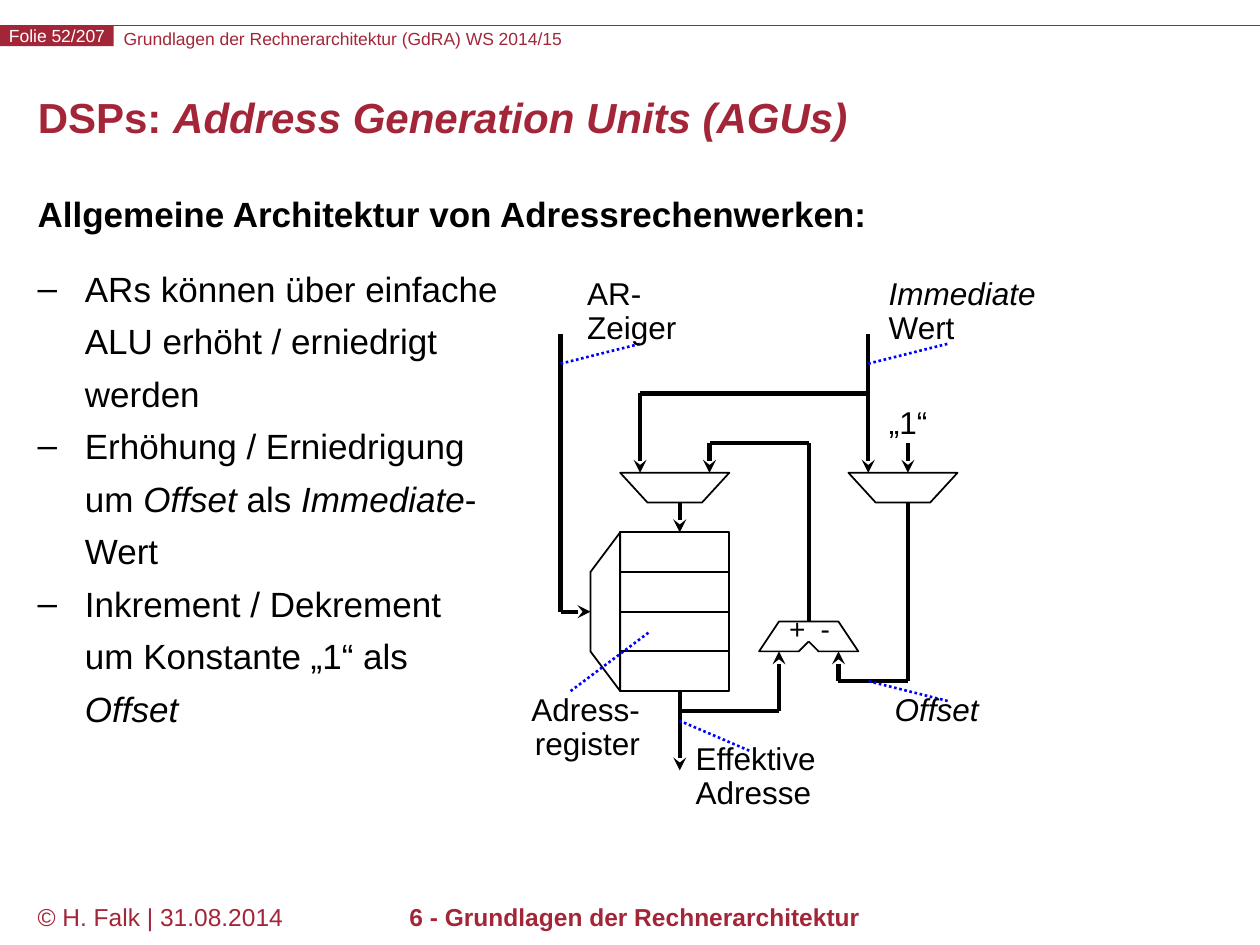
import pptx
import pptx.util
import pptx.dml.color
import pptx.enum.dml
import pptx.enum.shapes
import pptx.enum.text
import pptx.oxml.ns
import lxml.etree

Pt = pptx.util.Pt
ALIGN = pptx.enum.text.PP_ALIGN
ANCHOR = pptx.enum.text.MSO_ANCHOR
KIND = pptx.enum.shapes.MSO_SHAPE


class Theme:
    font = "Arial"
    red, black, white, blue = "A32638", "000000", "FFFFFF", "0000FF"
    title, body, label, sign, foot, head = 24, 20, 18, 16, 14, 10
    thin, wire, dots = 1, 2.5, 1.5
    # Diagram grid: origin and step in points
    left, top, step = 320.4, 190.8, 5.67


def grid(x, y):
    return Theme.left + x * Theme.step, Theme.top + y * Theme.step


def color(code):
    return pptx.dml.color.RGBColor.from_string(code)


def child(node, tag, **attrs):
    return lxml.etree.SubElement(node, pptx.oxml.ns.qn(tag), attrs)


class Page:
    def __init__(self, slide):
        self.slide = slide
        self.shapes = slide.shapes

    def fill_text(self, shape, paras, size, ink=Theme.black, bold=False,
                  align=ALIGN.LEFT, space=None, gap=0, inset=None,
                  anchor=ANCHOR.TOP):
        """Each paragraph is a list of runs; a run in a tuple is italic."""
        frame = shape.text_frame
        frame.word_wrap = True
        frame.vertical_anchor = anchor
        if inset is not None:
            frame.margin_left = frame.margin_right = Pt(inset)
            frame.margin_top = frame.margin_bottom = Pt(inset)
        for i, runs in enumerate(paras):
            para = frame.add_paragraph() if i else frame.paragraphs[0]
            para.alignment = align
            para.space_before = Pt(gap if i else 0)
            if space:
                para.line_spacing = space
            for part in runs:
                slant = isinstance(part, tuple)
                run = para.add_run()
                run.text = part[0] if slant else part
                font = run.font
                font.name, font.size = Theme.font, Pt(size)
                font.bold, font.italic = bold, slant
                font.color.rgb = color(ink)
        return frame

    def title(self, box, runs):
        shape = self.shapes.title
        shape.left, shape.top, shape.width, shape.height = map(Pt, box)
        self.fill_text(shape, [runs], Theme.title, Theme.red, True,
                       space=Pt(24), anchor=ANCHOR.MIDDLE)

    def text(self, box, paras, size, **style):
        shape = self.shapes.add_textbox(*map(Pt, box))
        return self.fill_text(shape, paras, size, **style)

    def list(self, box, paras):
        frame = self.text(box, paras, Theme.body, space=1.25)
        for para in frame.paragraphs:
            props = para._p.get_or_add_pPr()
            props.set("marL", str(Pt(27)))
            props.set("indent", str(-Pt(27)))
            child(props, "a:buFont", typeface=Theme.font)
            child(props, "a:buChar", char="–")

    def label(self, box, paras, align=ALIGN.LEFT, size=Theme.label, space=0.7):
        return self.text(box, paras, size, align=align, space=space,
                         gap=4, inset=0)

    def rect(self, box, fill=None):
        shape = self.shapes.add_shape(KIND.RECTANGLE, *map(Pt, box))
        shape.shadow.inherit = False
        if fill:
            shape.fill.solid()
            shape.fill.fore_color.rgb = color(fill)
            shape.line.fill.background()
        else:
            self.edge(shape)
        return shape

    def edge(self, shape):
        shape.fill.background()
        shape.line.color.rgb = color(Theme.black)
        shape.line.width = Pt(Theme.thin)

    def outline(self, spots, close=True):
        ends = [tuple(map(Pt, grid(*spot))) for spot in spots]
        form = self.shapes.build_freeform(*ends[0])
        form.add_line_segments(ends[1:], close=close)
        shape = form.convert_to_shape()
        shape.shadow.inherit = False
        self.edge(shape)

    def line(self, start, end, ink=Theme.black, width=Theme.wire,
             dots=False, arrow=False):
        link = self.shapes.add_connector(
            pptx.enum.shapes.MSO_CONNECTOR.STRAIGHT,
            *map(Pt, start + end))
        link.line.color.rgb = color(ink)
        link.line.width = Pt(width)
        if dots:
            link.line.dash_style = pptx.enum.dml.MSO_LINE.ROUND_DOT
        if arrow:
            child(link.line._get_or_add_ln(), "a:tailEnd", type="stealth")
        child(link._element.spPr, "a:effectLst")


def frame_parts(page):
    # Header band
    page.line((0, 14.4), (720, 14.4), ink=Theme.red, width=0.75)
    page.text((70.6, 15.8, 475, 12), [["Grundlagen der Rechnerarchitektur (GdRA) WS 2014/15"]],
              Theme.head, ink=Theme.red, inset=0)
    tag = page.rect((0, 14.4, 65, 12), fill=Theme.red)
    page.fill_text(tag, [["Folie 52/207"]], Theme.head, ink=Theme.white,
                   align=ALIGN.CENTER, inset=0, anchor=ANCHOR.MIDDLE)
    # Footer
    page.text((14.4, 512, 158, 28), [["© H. Falk | 31.08.2014"]],
              Theme.foot, ink=Theme.red)
    page.text((144.7, 512, 436, 28), [["6 - Grundlagen der Rechnerarchitektur"]],
              Theme.foot, ink=Theme.red, bold=True, align=ALIGN.CENTER)


def body_parts(page):
    page.title((14.4, 43.2, 692, 52), ["DSPs: ", ("Address Generation Units (AGUs)",)])
    page.text((14.4, 109.4, 692, 36), [["Allgemeine Architektur von Adressrechenwerken:"]],
              Theme.body, bold=True, space=0.9)
    page.list((14.4, 143.3, 278, 365), [
        ["ARs können über einfache ALU erhöht / erniedrigt werden"],
        ["Erhöhung / Erniedrigung um ", ("Offset ",), "als ", ("Immediate",), "-Wert"],
        ["Inkrement / Dekrement um Konstante „1“ als ", ("Offset",)],
    ])


def draw_units(page):
    # ALU: two mirrored halves
    for side in (-1, 1):
        half = [(0, 31), (1, 32), (5, 32), (3, 29), (0, 29)]
        page.outline([(25 + side * x, y) for x, y in half], close=False)
    # Multiplexers
    for x in (6, 29):
        page.outline([(x, 14), (x + 2.75, 17), (x + 8.25, 17), (x + 11, 14)])
    # Register file with its decoder
    for row in range(4):
        page.rect(grid(6, 20 + 4 * row) + (11 * Theme.step, 4 * Theme.step))
    page.outline([(6, 20), (3, 24), (3, 32), (6, 36)])


def draw_wires(page):
    # Each route runs through its corners
    arrows = [
        [(25, 29), (25, 11), (15, 11), (15, 14)],
        [(12, 38), (22, 38), (22, 32)],
        [(35, 11), (35, 14)],
        [(12, 36), (12, 44)],
        [(0, 0), (0, 28), (3, 28)],
        [(12, 17), (12, 20)],
        [(31, 6), (8, 6), (8, 14)],
        [(31, 0), (31, 6), (31, 14)],
        [(35, 17), (35, 35), (28, 35), (28, 32)],
    ]
    for route in arrows:
        for i in range(1, len(route)):
            page.line(grid(*route[i - 1]), grid(*route[i]),
                      arrow=i == len(route) - 1)
    # Dotted pointers to the labels
    for start, end in [((1, 36), (9, 30)), ((19, 42), (12, 39)),
                       ((0, 3), (8, 1)), ((31, 3), (39, 1)),
                       ((39, 37), (31, 35))]:
        page.line(grid(*start), grid(*end), ink=Theme.blue,
                  width=Theme.dots, dots=True)


def draw_labels(page):
    page.label((335.5, 162.7, 66, 35), [["AR-"], ["Zeiger"]])
    page.label((507.8, 162.7, 99, 35), [[("Immediate",)], ["Wert"]])
    page.label((288.7, 400.3, 77, 35), [["Adress-"], ["register"]], ALIGN.RIGHT)
    page.label((397.5, 428.4, 84, 35), [["Effektive"], ["Adresse"]])
    page.label((511.2, 400.3, 63, 16), [[("Offset",)]])
    page.label((500.4, 230.4, 37, 21.6), [["„1“"]], ALIGN.CENTER, space=1)
    # Signs in the ALU, set apart by a tab stop
    signs = page.label((451, 349.5, 36, 19.4), [["+\t-"]], size=Theme.sign, space=1)
    stops = child(signs.paragraphs[0]._p.get_or_add_pPr(), "a:tabLst")
    child(stops, "a:tab", pos=str(Pt(18)), algn="l")


def main():
    deck = pptx.Presentation()
    deck.slide_width, deck.slide_height = Pt(720), Pt(540)
    page = Page(deck.slides.add_slide(deck.slide_layouts[5]))
    frame_parts(page)
    body_parts(page)
    draw_units(page)
    draw_wires(page)
    draw_labels(page)
    deck.save("out.pptx")


if __name__ == "__main__":
    main()
